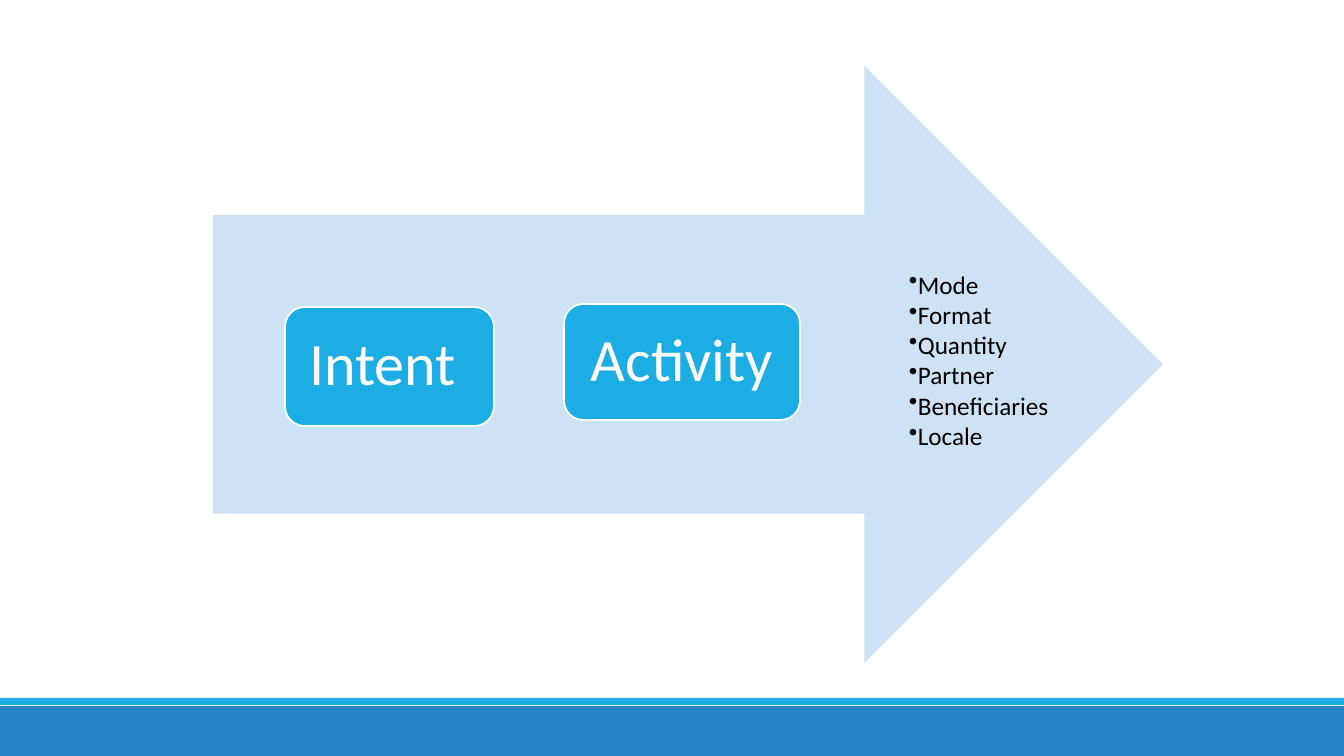
import pptx
import pptx.util
import pptx.dml.color
import pptx.enum.shapes
import pptx.enum.text
import lxml.etree

WIDE, HIGH = 1344, 756
FONT = "Calibri"
KIND = pptx.enum.shapes.MSO_SHAPE

# kind, box (left, top, width, height), fill
PANELS = [
    (KIND.RECTANGLE, (0, 706, WIDE, 50), "2683C6"),
    (KIND.RECTANGLE, (0, 698, WIDE, 7), "1CADE4"),
    (KIND.RIGHT_ARROW, (213, 66, 950, 597), "CDE3F5"),
]
STEPS = [
    ("Intent ", (285, 307, 209, 119)),
    ("Activity", (564, 304, 236, 116)),
]
TRAITS = ["Mode", "Format", "Quantity", "Partner", "Beneficiaries", "Locale"]
TRAIT_BOX = (899, 264, 173, 254)


def px(num):
    return pptx.util.Emu(round(num * 914400 / 100.8))


def paint(fmt, tone):
    """Give a fill or a line one solid colour."""
    fill = getattr(fmt, "fill", fmt)
    fill.solid()
    fill.fore_color.rgb = pptx.dml.color.RGBColor.from_string(tone)


def add_panel(slide, kind, box, tone):
    shape = slide.shapes.add_shape(kind, *map(px, box))
    shape.shadow.inherit = False
    paint(shape.fill, tone)
    shape.line.fill.background()
    return shape


def add_run(para, text, size, tone):
    run = para.add_run()
    run.text = text
    run.font.name = FONT
    run.font.size = pptx.util.Pt(size)
    paint(run.font, tone)


def add_step(slide, text, box):
    shape = add_panel(slide, KIND.ROUNDED_RECTANGLE, box, "1CADE4")
    paint(shape.line, "FFFFFF")
    shape.line.width = pptx.util.Pt(1.25)
    frame = shape.text_frame
    frame.word_wrap = True
    frame.vertical_anchor = pptx.enum.text.MSO_ANCHOR.MIDDLE
    for side in ("left", "top", "right", "bottom"):
        setattr(frame, "margin_" + side, px(18))
    para = frame.paragraphs[0]
    para.alignment = pptx.enum.text.PP_ALIGN.CENTER
    para.line_spacing = 0.9
    add_run(para, text, 43, "FFFFFF")


def add_list(slide, items, box):
    frame = slide.shapes.add_textbox(*map(px, box)).text_frame
    frame.word_wrap = True
    for i, item in enumerate(items):
        para = frame.add_paragraph() if i else frame.paragraphs[0]
        props = para._p.get_or_add_pPr()
        mark = lxml.etree.SubElement(props, pptx.oxml.ns.qn("a:buChar"))
        mark.set("char", "•")
        add_run(para, item, 18, "000000")


def main():
    deck = pptx.Presentation()
    deck.slide_width, deck.slide_height = px(WIDE), px(HIGH)
    slide = deck.slides.add_slide(deck.slide_layouts[6])
    for kind, box, tone in PANELS:
        add_panel(slide, kind, box, tone)
    for text, box in STEPS:
        add_step(slide, text, box)
    add_list(slide, TRAITS, TRAIT_BOX)
    deck.save("out.pptx")


if __name__ == "__main__":
    main()
